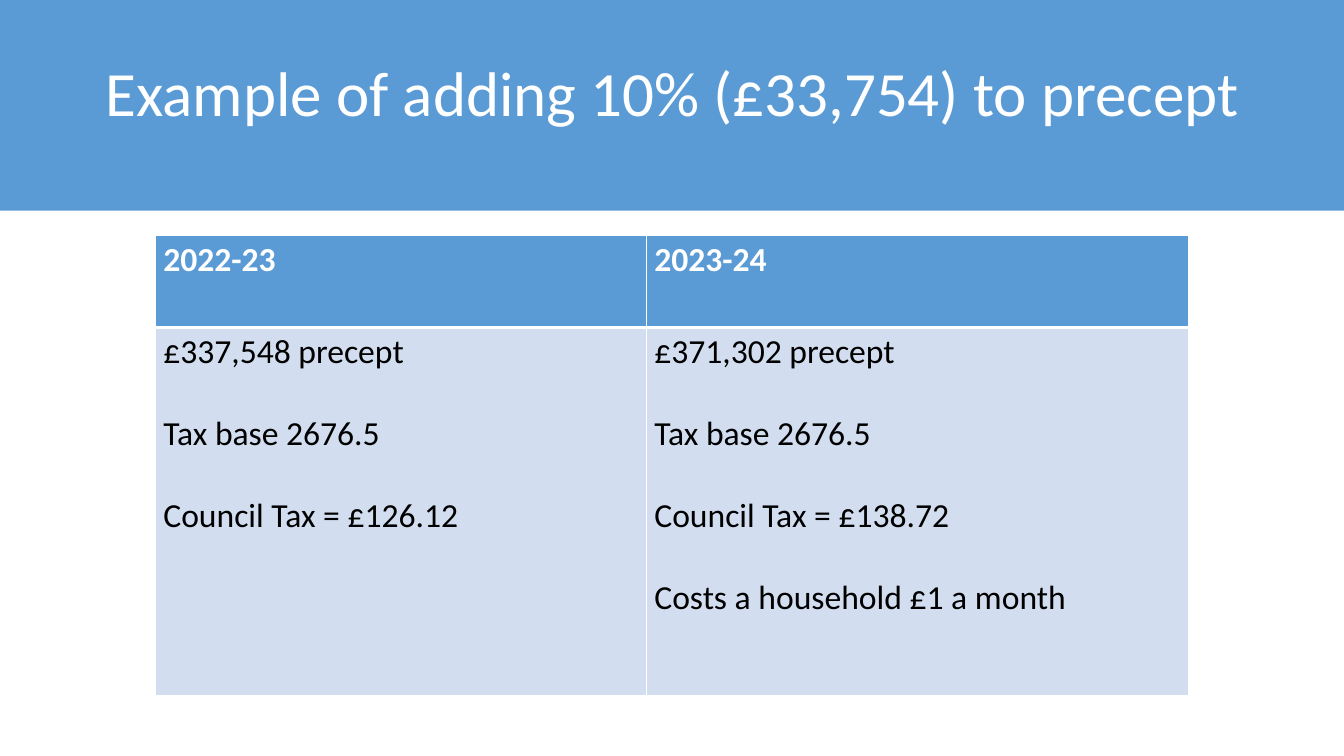
from dataclasses import dataclass

from lxml import etree
from pptx import Presentation
from pptx.dml.color import RGBColor
from pptx.enum import shapes, text
from pptx.oxml.ns import qn
from pptx.util import Inches, Pt


@dataclass(frozen=True)
class Theme:
    font: str = "Calibri"
    blue: str = "5B9BD5"
    pale_blue: str = "D2DEEF"
    white: str = "FFFFFF"
    black: str = "000000"
    title_size: float = 45
    table_size: float = 24
    paragraph_gap: float = 29.3
    thin_border: float = 1
    header_border: float = 3


THEME = Theme()

YEARS = {
    "2022-23": ["£337,548 precept", "Tax base 2676.5", "Council Tax = £126.12"],
    "2023-24": ["£371,302 precept", "Tax base 2676.5", "Council Tax = £138.72",
                "Costs a household £1 a month"],
}
COLUMN_WIDTHS = [4.87, 5.38]
ROW_HEIGHTS = [0.91, 3.65]


def style_font(font, size, color, bold=False):
    font.name = THEME.font
    font.size = Pt(size)
    font.bold = bold
    font.color.rgb = RGBColor.from_string(color)


def add_banner(slide, width, height):
    banner = slide.shapes.add_shape(
        shapes.MSO_SHAPE.RECTANGLE, 0, 0, width, height)
    banner.shadow.inherit = False
    banner.fill.solid()
    banner.fill.fore_color.rgb = RGBColor.from_string(THEME.blue)
    banner.line.fill.background()


def add_title(slide, wording):
    title = slide.shapes.add_textbox(
        Inches(0.92), Inches(0.32), Inches(11.5), Inches(1.02))
    frame = title.text_frame
    frame.word_wrap = True
    frame.vertical_anchor = text.MSO_ANCHOR.BOTTOM
    frame.text = wording
    paragraph = frame.paragraphs[0]
    paragraph.alignment = text.PP_ALIGN.CENTER
    paragraph.line_spacing = 0.9
    style_font(paragraph.runs[0].font, THEME.title_size, THEME.white)


def set_borders(cell, top, bottom):
    """Draw white cell edges; the side edges are always thin."""
    properties = cell._tc.get_or_add_tcPr()
    widths = {"a:lnL": THEME.thin_border, "a:lnR": THEME.thin_border,
              "a:lnT": top, "a:lnB": bottom}
    for position, (tag, width) in enumerate(widths.items()):
        edge = etree.Element(qn(tag), w=str(Pt(width)))
        fill = etree.SubElement(edge, qn("a:solidFill"))
        etree.SubElement(fill, qn("a:srgbClr"), val=THEME.white)
        properties.insert(position, edge)


def fill_cell(cell, lines, fill, color, bold=False):
    cell.fill.solid()
    cell.fill.fore_color.rgb = RGBColor.from_string(fill)
    cell.margin_left = cell.margin_right = Inches(0.08)
    cell.margin_top = cell.margin_bottom = Inches(0.04)
    cell.text_frame.text = "\n".join(lines)
    for paragraph in cell.text_frame.paragraphs:
        style_font(paragraph.runs[0].font, THEME.table_size, color, bold)
    for paragraph in cell.text_frame.paragraphs[:-1]:
        paragraph.space_after = Pt(THEME.paragraph_gap)


def add_precept_table(slide):
    table = slide.shapes.add_table(
        len(ROW_HEIGHTS), len(YEARS), Inches(1.54), Inches(2.34),
        Inches(sum(COLUMN_WIDTHS)), Inches(sum(ROW_HEIGHTS))).table
    for row, height in zip(table.rows, ROW_HEIGHTS):
        row.height = Inches(height)
    for index, (year, details) in enumerate(YEARS.items()):
        table.columns[index].width = Inches(COLUMN_WIDTHS[index])
        heading, body = table.cell(0, index), table.cell(1, index)
        fill_cell(heading, [year], THEME.blue, THEME.white, bold=True)
        fill_cell(body, details, THEME.pale_blue, THEME.black)
        set_borders(heading, THEME.thin_border, THEME.header_border)
        set_borders(body, THEME.header_border, THEME.thin_border)


def main():
    presentation = Presentation()
    presentation.slide_width = Inches(13.33)
    presentation.slide_height = Inches(7.5)
    slide = presentation.slides.add_slide(presentation.slide_layouts[6])
    add_banner(slide, presentation.slide_width, Inches(2.09))
    add_title(slide, "Example of adding 10% (£33,754) to precept")
    add_precept_table(slide)
    presentation.save("out.pptx")


if __name__ == "__main__":
    main()
